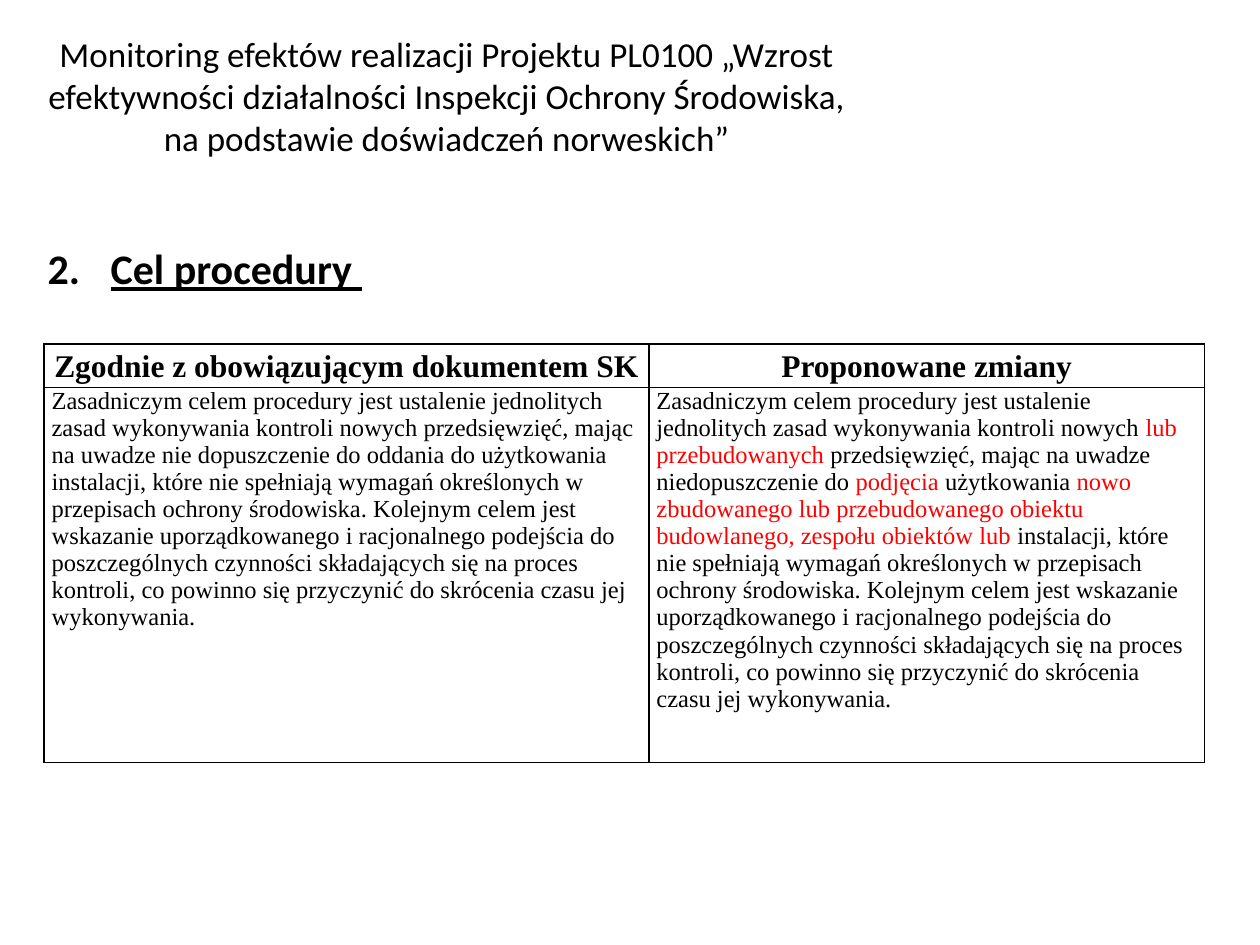
from typing import NamedTuple

from lxml import etree
from pptx import Presentation
from pptx.dml.color import RGBColor
from pptx.enum.text import PP_ALIGN
from pptx.oxml.ns import qn
from pptx.util import Inches, Pt

CENTER, LEFT = PP_ALIGN.CENTER, PP_ALIGN.LEFT
WIDE, HIGH = Inches(10), Inches(7.5)
SANS, SERIF = "Calibri", "Times New Roman"
COLORS = {"ink": "000000", "new": "FF0000"}


class Area(NamedTuple):
    """Shares of the slide's width and height."""
    x: float
    y: float
    w: float
    h: float

    def emu(self) -> list[int]:
        sides = (WIDE, HIGH, WIDE, HIGH)
        return [round(share * side) for share, side in zip(self, sides)]


class Style(NamedTuple):
    face: str
    size: int
    bold: bool = False
    line: bool = False
    align: PP_ALIGN = LEFT
    lead: float = 1.0


class Run(NamedTuple):
    text: str
    color: str = "ink"


TITLE = Style(SANS, 20, align=CENTER)
TOPIC = Style(SANS, 24, bold=True, line=True)
HEAD = Style(SERIF, 18, bold=True, align=CENTER, lead=1.15)
BODY = Style(SERIF, 14)

# Table wording: current text on the left, proposed text on the right
COLS, ROWS = (0.48, 0.441), (0.044, 0.397)
CELLS = [
    (HEAD, [[Run("Zgodnie z obowiązującym dokumentem SK ")],
            [Run("Proponowane zmiany")]]),
    (BODY, [
        [Run("Zasadniczym celem procedury jest ustalenie jednolitych zasad "
             "wykonywania kontroli nowych przedsięwzięć, mając na uwadze nie "
             "dopuszczenie do oddania do użytkowania instalacji, które nie "
             "spełniają wymagań określonych w przepisach ochrony środowiska. "
             "Kolejnym celem jest wskazanie uporządkowanego i racjonalnego "
             "podejścia do poszczególnych czynności składających się na proces "
             "kontroli, co powinno się przyczynić do skrócenia czasu jej "
             "wykonywania.")],
        [Run("Zasadniczym celem procedury jest ustalenie jednolitych zasad "
             "wykonywania kontroli nowych "),
         Run("lub przebudowanych", "new"),
         Run(" przedsięwzięć, mając na uwadze niedopuszczenie do "),
         Run("podjęcia ", "new"),
         Run("użytkowania "),
         Run("nowo zbudowanego lub przebudowanego obiektu budowlanego, "
             "zespołu obiektów lub ", "new"),
         Run("instalacji, które nie spełniają wymagań określonych w przepisach "
             "ochrony środowiska. Kolejnym celem jest wskazanie "
             "uporządkowanego i racjonalnego podejścia do poszczególnych "
             "czynności składających się na proces kontroli, co powinno się "
             "przyczynić do skrócenia czasu jej wykonywania.")],
    ]),
]


def write(para, runs: list[Run], style: Style) -> None:
    para.alignment, para.line_spacing = style.align, style.lead
    font = para.font
    font.name, font.size = style.face, Pt(style.size)
    font.bold, font.underline = style.bold, style.line
    for run in runs:
        part = para.add_run()
        part.text = run.text
        part.font.color.rgb = RGBColor.from_string(COLORS[run.color])


def add_text(slide, area: Area, style: Style, text: str, start: int = 0) -> None:
    """Add a text box; a start above zero numbers its paragraph."""
    frame = slide.shapes.add_textbox(*area.emu()).text_frame
    frame.word_wrap = True
    para = frame.paragraphs[0]
    if start:
        props = para._p.get_or_add_pPr()
        props.set("marL", str(Inches(0.5)))
        props.set("indent", str(Inches(-0.5)))
        etree.SubElement(props, qn("a:buFont"), typeface="+mj-lt")
        etree.SubElement(props, qn("a:buAutoNum"), type="arabicPeriod",
                         startAt=str(start))
    write(para, [Run(text)], style)


def rule(cell) -> None:
    """Draw a thin line on all four sides of a cell."""
    props = cell._tc.get_or_add_tcPr()
    for spot, side in enumerate(("lnL", "lnR", "lnT", "lnB")):
        edge = etree.Element(qn(f"a:{side}"), w=str(Pt(1)))
        fill = etree.SubElement(edge, qn("a:solidFill"))
        etree.SubElement(fill, qn("a:srgbClr"), val=COLORS["ink"])
        props.insert(spot, edge)


def add_grid(slide, x: float, y: float) -> None:
    area = Area(x, y, sum(COLS), sum(ROWS))
    table = slide.shapes.add_table(len(ROWS), len(COLS), *area.emu()).table
    table.first_row = table.horz_banding = False
    for col, share in zip(table.columns, COLS):
        col.width = round(share * WIDE)
    for row, share, (style, texts) in zip(table.rows, ROWS, CELLS):
        row.height = round(share * HIGH)
        for cell, runs in zip(row.cells, texts):
            cell.margin_left = cell.margin_right = Inches(0.06)
            cell.margin_top = cell.margin_bottom = 0
            cell.fill.background()
            rule(cell)
            write(cell.text_frame.paragraphs[0], runs, style)


def main() -> None:
    deck = Presentation()
    deck.slide_width, deck.slide_height = WIDE, HIGH
    slide = deck.slides.add_slide(deck.slide_layouts[6])

    # Project title and numbered topic
    add_text(slide, Area(0.012, 0.028, 0.685, 0.19), TITLE,
             "Monitoring efektów realizacji Projektu PL0100 „Wzrost "
             "efektywności działalności Inspekcji Ochrony Środowiska, "
             "na podstawie doświadczeń norweskich”")
    add_text(slide, Area(0.028, 0.25, 0.937, 0.052), TOPIC,
             "Cel procedury ", start=2)

    # Comparison of the two versions
    add_grid(slide, 0.035, 0.364)
    deck.save("out.pptx")


if __name__ == "__main__":
    main()
